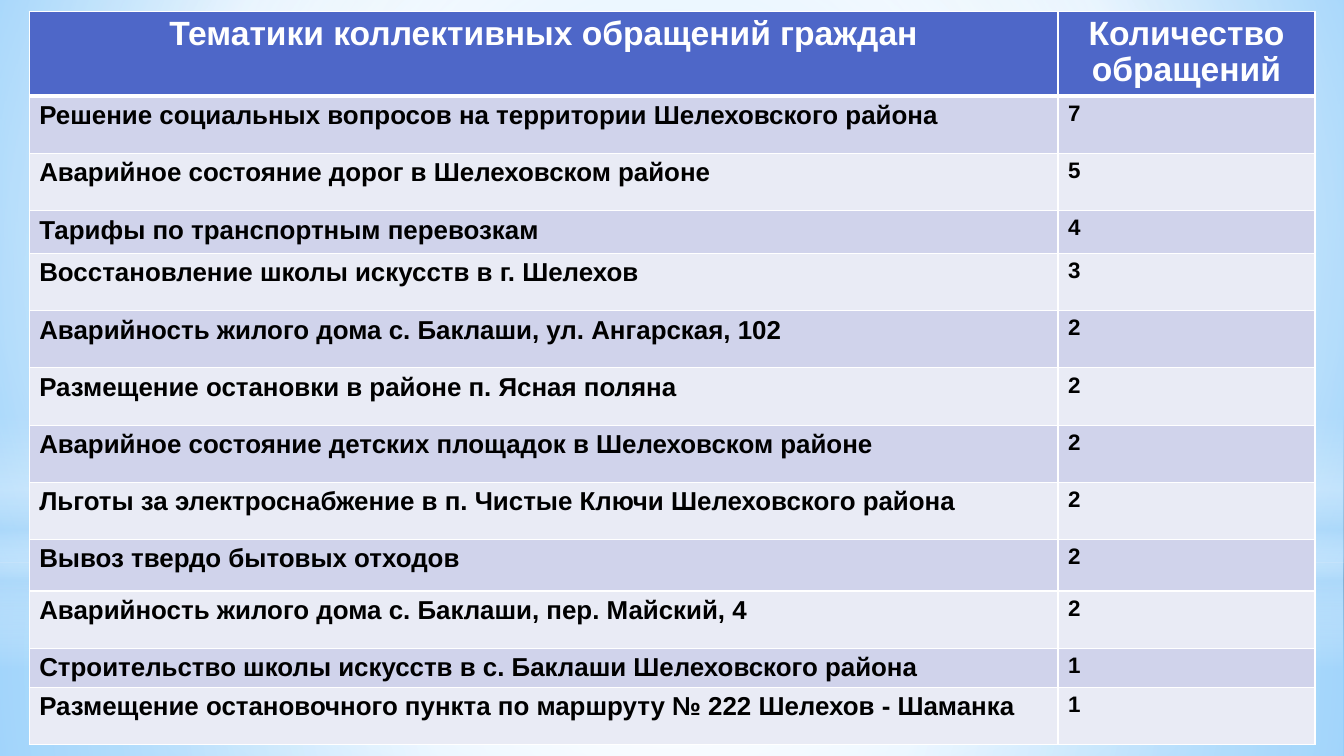
from dataclasses import dataclass
from typing import Optional

from pptx import Presentation
from pptx import oxml
from pptx import util as u
from pptx.dml.color import RGBColor
from pptx.enum import shapes, text
from pptx.oxml import ns

WHITE = RGBColor(0xFF, 0xFF, 0xFF)
BLACK = RGBColor(0x00, 0x00, 0x00)
HEADER_BLUE = RGBColor(0x4E, 0x67, 0xC8)
BAND_DARK = RGBColor(0xD0, 0xD3, 0xEB)
BAND_LIGHT = RGBColor(0xE9, 0xEB, 0xF5)
SKY = RGBColor(0x9E, 0xD5, 0xFF)
DEEP_SKY = RGBColor(0x5B, 0xB9, 0xFF)
PALE_SKY = RGBColor(0xB4, 0xDC, 0xFA)

FONT = "Arial"
SLIDE_WIDTH, SLIDE_HEIGHT = 960, 540
TABLE_LEFT, TABLE_TOP = 20.9, 8.1
COLUMN_WIDTHS = (734.8, 183.6)
HEADER_HEIGHT = 60.7
ROW_HEIGHT = 40.9


@dataclass
class Stop:
    position: int
    color: RGBColor
    opacity: int = 100


@dataclass
class Glow:
    kind: shapes.MSO_SHAPE
    top: float
    height: float
    stops: list[Stop]
    focus: Optional[tuple[int, int, int, int]] = (50, 50, 50, 50)


@dataclass
class Topic:
    name: str
    count: int
    height: float = ROW_HEIGHT


BACKGROUND_STOPS = [Stop(0, SKY), Stop(60, WHITE), Stop(100, DEEP_SKY)]
GLOWS = [
    Glow(shapes.MSO_SHAPE.RECTANGLE, 401.8, 138.2,
         [Stop(0, WHITE, 91), Stop(37, WHITE, 76), Stop(100, PALE_SKY, 79)]),
    Glow(shapes.MSO_SHAPE.RECTANGLE, 0, 401.8,
         [Stop(0, WHITE, 89), Stop(48, WHITE, 62), Stop(100, PALE_SKY, 79)]),
    Glow(shapes.MSO_SHAPE.RECTANGLE, 296.6, 180,
         [Stop(0, WHITE, 0), Stop(29, WHITE, 30), Stop(45, PALE_SKY, 40),
          Stop(55, WHITE, 26), Stop(65, PALE_SKY, 60), Stop(100, WHITE, 0)], None),
    Glow(shapes.MSO_SHAPE.OVAL, 126, 401.8,
         [Stop(0, WHITE), Stop(56, WHITE, 0)]),
]

HEADERS = ("Тематики коллективных обращений граждан", "Количество обращений")
TOPICS = [
    Topic("Решение социальных вопросов на территории Шелеховского района", 7),
    Topic("Аварийное состояние дорог в Шелеховском районе", 5),
    Topic("Тарифы по транспортным перевозкам", 4, 30.5),
    Topic("Восстановление школы искусств в г. Шелехов", 3),
    Topic("Аварийность жилого дома с. Баклаши, ул. Ангарская, 102", 2),
    Topic("Размещение остановки в районе п. Ясная поляна", 2),
    Topic("Аварийное состояние детских площадок в Шелеховском районе", 2),
    Topic("Льготы за электроснабжение в п. Чистые Ключи Шелеховского района", 2),
    Topic("Вывоз твердо бытовых отходов", 2, 36.8),
    Topic("Аварийность жилого дома с. Баклаши, пер. Майский, 4", 2),
    Topic("Строительство школы искусств в с. Баклаши Шелеховского района", 1, 28),
    Topic("Размещение остановочного пункта по маршруту № 222 Шелехов - Шаманка", 1),
]


def apply_gradient(owner, stops: list[Stop], focus: Optional[tuple] = None) -> None:
    stop_xml = "".join(
        f'<a:gs pos="{stop.position * 1000}"><a:srgbClr val="{stop.color}">'
        f'<a:alpha val="{stop.opacity * 1000}"/></a:srgbClr></a:gs>'
        for stop in stops
    )
    if focus:
        sides = " ".join(f'{side}="{value * 1000}"' for side, value in zip("ltrb", focus))
        direction = f'<a:path path="circle"><a:fillToRect {sides}/></a:path>'
    else:
        direction = '<a:lin ang="5400000" scaled="0"/>'
    gradient = oxml.parse_xml(
        f'<a:gradFill {ns.nsdecls("a")} rotWithShape="1">'
        f"<a:gsLst>{stop_xml}</a:gsLst>{direction}</a:gradFill>"
    )
    owner.fill.solid()
    return gradient


def replace_solid(element, gradient) -> None:
    solid = element.xpath("./p:spPr/a:solidFill | ./p:cSld/p:bg/p:bgPr/a:solidFill")[0]
    solid.getparent().replace(solid, gradient)


def add_glow(slide, glow: Glow) -> None:
    shape = slide.shapes.add_shape(
        glow.kind, 0, u.Pt(glow.top), u.Pt(SLIDE_WIDTH), u.Pt(glow.height))
    shape.shadow.inherit = False
    shape.line.fill.background()
    replace_solid(shape.element, apply_gradient(shape, glow.stops, glow.focus))


def write_text(cell, content: str, *, size: float, color: RGBColor = BLACK,
               align: text.PP_ALIGN = text.PP_ALIGN.LEFT, spacing: float = 1.0) -> None:
    paragraph = cell.text_frame.paragraphs[0]
    paragraph.alignment = align
    paragraph.line_spacing = spacing
    run = paragraph.add_run()
    run.text = content
    run.font.name = FONT
    run.font.size = u.Pt(size)
    run.font.bold = True
    run.font.color.rgb = color


def format_cell(cell, fill: RGBColor, top: float = 1, bottom: float = 1) -> None:
    cell.fill.solid()
    cell.fill.fore_color.rgb = fill
    properties = cell._tc.get_or_add_tcPr()
    widths = {"lnL": 1, "lnR": 1, "lnT": top, "lnB": bottom}
    for index, (side, width) in enumerate(widths.items()):
        properties.insert(index, oxml.parse_xml(
            f'<a:{side} {ns.nsdecls("a")} w="{u.Pt(width)}"><a:solidFill>'
            f'<a:srgbClr val="{WHITE}"/></a:solidFill></a:{side}>'))


def add_topic_table(slide) -> None:
    heights = [HEADER_HEIGHT] + [topic.height for topic in TOPICS]
    table = slide.shapes.add_table(
        len(heights), len(COLUMN_WIDTHS), u.Pt(TABLE_LEFT), u.Pt(TABLE_TOP),
        u.Pt(sum(COLUMN_WIDTHS)), u.Pt(sum(heights))).table
    for column, width in zip(table.columns, COLUMN_WIDTHS):
        column.width = u.Pt(width)
    for row, height in zip(table.rows, heights):
        row.height = u.Pt(height)
    for cell, header in zip(table.rows[0].cells, HEADERS):
        format_cell(cell, HEADER_BLUE, bottom=3)
        write_text(cell, header, size=24, color=WHITE,
                   align=text.PP_ALIGN.CENTER, spacing=0.96)
    for index, topic in enumerate(TOPICS, start=1):
        fill = BAND_DARK if index % 2 else BAND_LIGHT
        name_cell, count_cell = table.rows[index].cells
        for cell in (name_cell, count_cell):
            format_cell(cell, fill, top=3 if index == 1 else 1)
        write_text(name_cell, topic.name, size=18.5)
        write_text(count_cell, str(topic.count), size=16)


def main() -> None:
    presentation = Presentation()
    presentation.slide_width = u.Pt(SLIDE_WIDTH)
    presentation.slide_height = u.Pt(SLIDE_HEIGHT)
    slide = presentation.slides.add_slide(presentation.slide_layouts[6])
    replace_solid(slide.element, apply_gradient(
        slide.background, BACKGROUND_STOPS, (20, 10, 20, 60)))
    for glow in GLOWS:
        add_glow(slide, glow)
    add_topic_table(slide)
    presentation.save("out.pptx")


if __name__ == "__main__":
    main()
